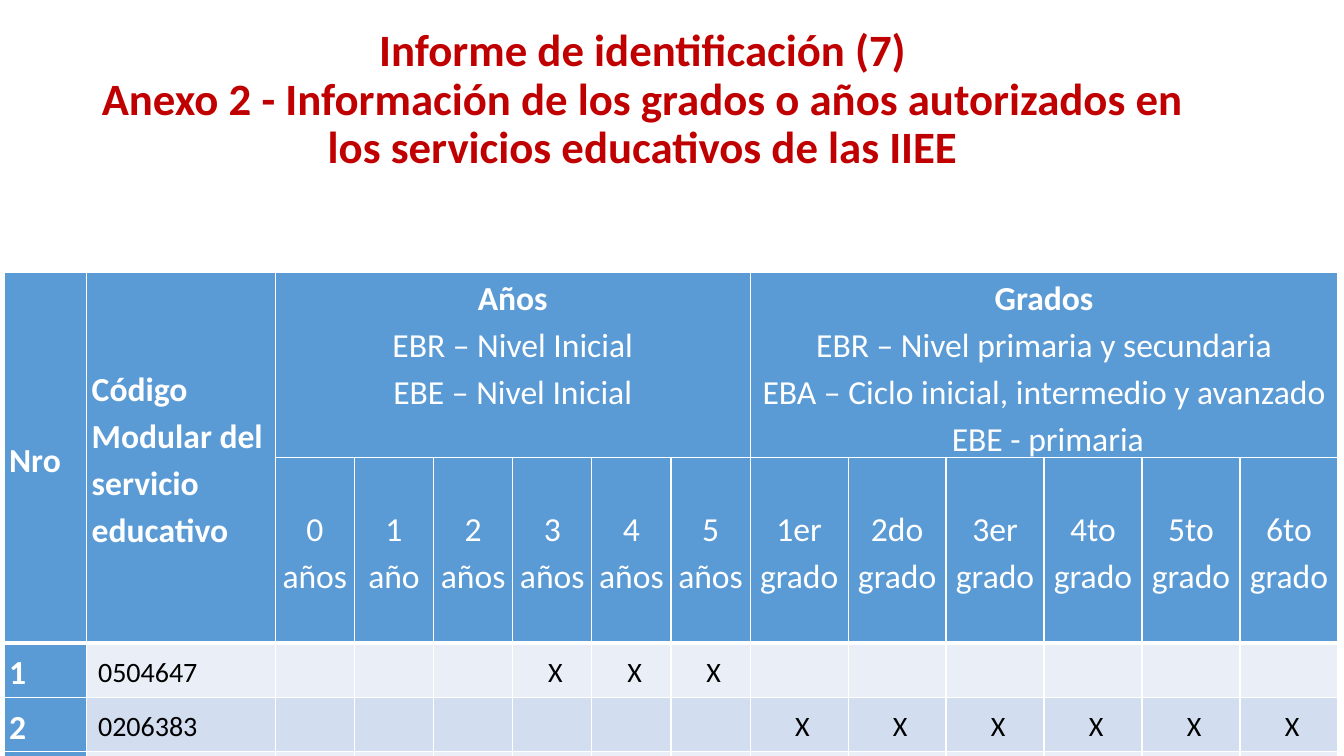
import pptx
import pptx.util
import pptx.dml.color
import pptx.enum.text
import pptx.oxml
import pptx.oxml.ns

Color = pptx.dml.color.RGBColor
Align = pptx.enum.text.PP_ALIGN
Anchor = pptx.enum.text.MSO_ANCHOR

RED = Color(0xC0, 0x00, 0x00)
BLUE = Color(0x5B, 0x9B, 0xD5)
PALE = Color(0xEA, 0xEF, 0xF7)
SOFT = Color(0xD2, 0xDE, 0xEF)
WHITE = Color(0xFF, 0xFF, 0xFF)
BLACK = Color(0x00, 0x00, 0x00)


class Deck:
    face = "Calibri"

    def __init__(self):
        self.show = pptx.Presentation()
        self.show.slide_width = pptx.util.Inches(13.33)
        self.show.slide_height = pptx.util.Inches(7.5)
        self.slide = self.show.slides.add_slide(self.show.slide_layouts[5])

    def wide(self, share):
        return round(self.show.slide_width * share / 100)

    def high(self, share):
        return round(self.show.slide_height * share / 100)

    def font(self, para, size, color, bold):
        para.font.name = self.face
        para.font.size = pptx.util.Pt(size)
        para.font.color.rgb = color
        para.font.bold = bold

    def title(self, lines, left, top, width, height):
        shape = self.slide.shapes.title
        shape.left, shape.width = self.wide(left), self.wide(width)
        shape.top, shape.height = self.high(top), self.high(height)
        frame = shape.text_frame
        frame.word_wrap = True
        frame.vertical_anchor = Anchor.MIDDLE
        frame.auto_size = pptx.enum.text.MSO_AUTO_SIZE.SHAPE_TO_FIT_TEXT
        para = frame.paragraphs[0]
        para.text = "\v".join(lines)
        para.alignment = Align.CENTER
        para.line_spacing = 0.9
        self.font(para, 32, RED, True)

    def table(self, left, top, cols, rows):
        frame = self.slide.shapes.add_table(
            len(rows), len(cols), self.wide(left), self.high(top),
            self.wide(sum(cols)), self.high(sum(rows)))
        grid = frame.table
        for col, share in zip(grid.columns, cols):
            col.width = self.wide(share)
        for row, share in zip(grid.rows, rows):
            row.height = self.high(share)
        return grid

    def border(self, cell, **widths):
        props = cell._tc.get_or_add_tcPr()
        sides = {"L": 1, "R": 1, "T": 1, "B": 1} | widths
        for spot, (side, width) in enumerate(sides.items()):
            props.insert(spot, pptx.oxml.parse_xml(
                f'<a:ln{side} {pptx.oxml.ns.nsdecls("a")} w="{pptx.util.Pt(width)}">'
                f'<a:solidFill><a:srgbClr val="{WHITE}"/></a:solidFill></a:ln{side}>'))

    def paint(self, cell, fill, **widths):
        cell.fill.solid()
        cell.fill.fore_color.rgb = fill
        self.border(cell, **widths)

    def label(self, cell, lines, size=24, color=WHITE, bold=0,
              align=Align.CENTER, anchor=Anchor.MIDDLE):
        cell.margin_left = cell.margin_right = pptx.util.Inches(0.05)
        cell.margin_top = cell.margin_bottom = 0
        cell.vertical_anchor = anchor
        frame = cell.text_frame
        frame.text = "\n".join(lines)
        for spot, para in enumerate(frame.paragraphs):
            para.alignment = align
            para.line_spacing = 1.15
            self.font(para, size, color, spot < bold)


def main():
    deck = Deck()
    deck.title(["Informe de identificación (7)",
                "Anexo 2 - Información de los grados o años autorizados en "
                "los servicios educativos de las IIEE"], 4.5, 2.93, 86.65, 20.8)

    cols = [6.15, 14.03] + [5.89] * 6 + [7.29] * 6
    rows = [13.47, 7.07] + [7.2] * 3
    grid = deck.table(0.3, 36, cols, rows)

    fills = [BLUE, BLUE, PALE, SOFT, PALE]
    for row, fill in enumerate(fills):
        for col in range(len(cols)):
            widths = {}
            if row == 1 or row == 0 and col < 2:
                widths["B"] = 3
            if row == 2:
                widths["T"] = 3
            deck.paint(grid.cell(row, col), fill if col else BLUE, **widths)

    for col, text in enumerate(["Nro", "Código Modular del servicio educativo"]):
        grid.cell(0, col).merge(grid.cell(1, col))
        deck.label(grid.cell(0, col), [text], bold=1, align=Align.LEFT)

    groups = [
        (2, Anchor.TOP, ["Años", "EBR – Nivel Inicial", "EBE – Nivel Inicial"]),
        (8, Anchor.MIDDLE, ["Grados", "EBR – Nivel primaria y secundaria",
                            "EBA – Ciclo inicial, intermedio y avanzado",
                            " EBE - primaria"]),
    ]
    for col, anchor, lines in groups:
        grid.cell(0, col).merge(grid.cell(0, col + 5))
        deck.label(grid.cell(0, col), lines, bold=1, anchor=anchor)

    heads = [f"{age} año" if age == 1 else f"{age} años" for age in range(6)]
    heads += [f"{grade} grado" for grade in ("1er", "2do", "3er", "4to", "5to", "6to")]
    for col, text in enumerate(heads, 2):
        deck.label(grid.cell(1, col), [text])

    marks = [("0504647", range(5, 8)), ("0206383", range(8, 14)), ("", ())]
    for row, (code, ticks) in enumerate(marks, 2):
        deck.label(grid.cell(row, 0), [str(row - 1)], bold=1, align=Align.LEFT)
        if code:
            deck.label(grid.cell(row, 1), [f" {code}"], 20, BLACK, align=Align.LEFT)
        for col in ticks:
            deck.label(grid.cell(row, col), [" X"], 20, BLACK)

    deck.show.save("out.pptx")


if __name__ == "__main__":
    main()
